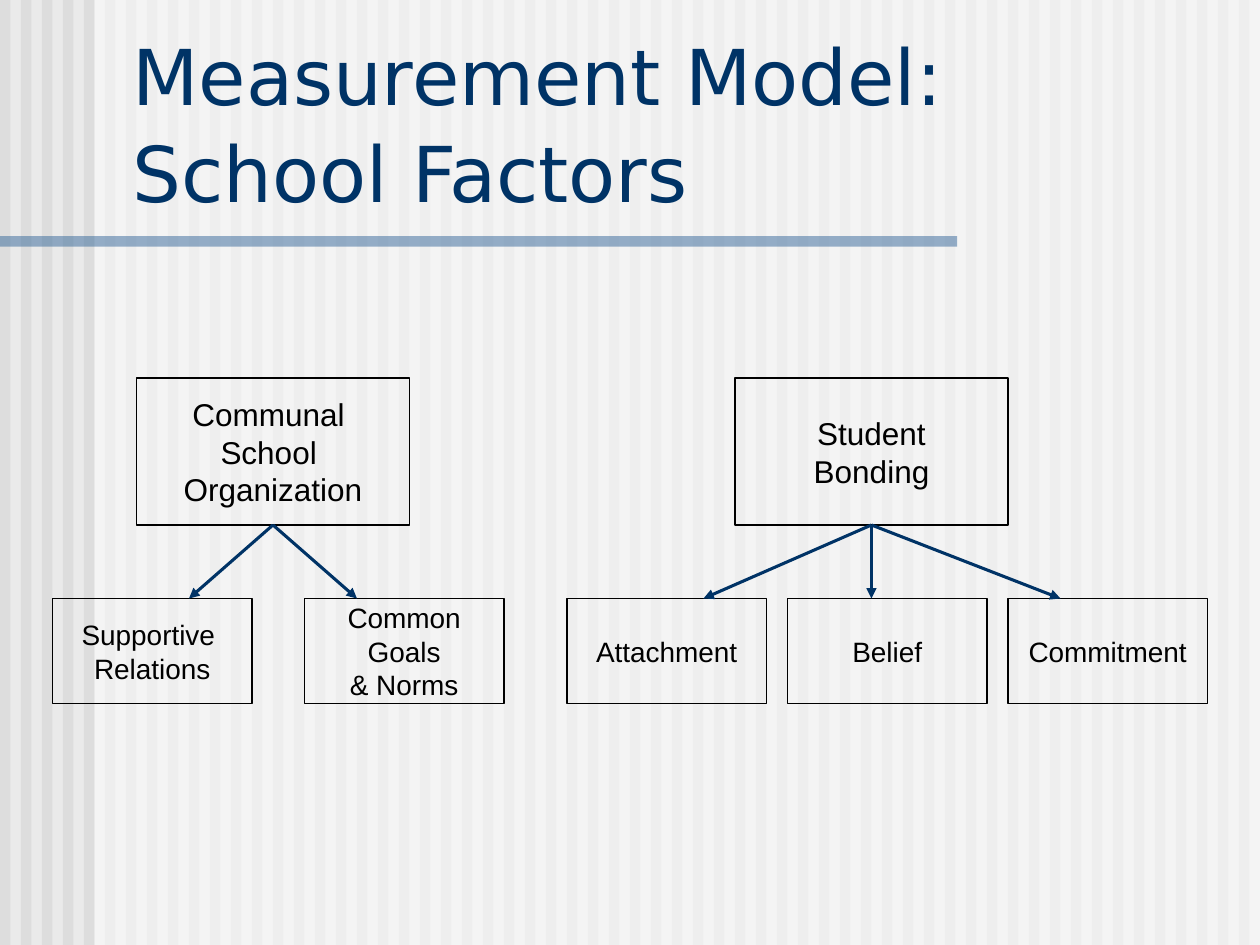
from pptx import Presentation
from pptx.dml.color import RGBColor
from pptx.enum.shapes import MSO_CONNECTOR as CONN, MSO_SHAPE as SHAPE
from pptx.enum.text import MSO_ANCHOR as ANCHOR, MSO_AUTO_SIZE as AUTO, PP_ALIGN as ALIGN
from pptx.oxml.ns import qn
from pptx.util import Pt
from lxml.etree import SubElement

WIDTH, HEIGHT = 720, 540
NAVY, BLACK = "003366", "000000"


def rgb(value):
    return RGBColor.from_string(value)


def add_text(p, text, size, font, color):
    r = p.add_run()
    r.text = text
    r.font.size = Pt(size)
    r.font.name = font
    r.font.color.rgb = rgb(color)


def add_bar(shapes, x, y, w, h, color, alpha=None):
    sp = shapes.add_shape(SHAPE.RECTANGLE, Pt(x), Pt(y), Pt(w), Pt(h))
    sp.shadow.inherit = False
    sp.fill.solid()
    sp.fill.fore_color.rgb = rgb(color)
    sp.line.fill.background()
    if alpha is not None:
        clr = sp.element.spPr.find(f"{qn('a:solidFill')}/{qn('a:srgbClr')}")
        SubElement(clr, qn("a:alpha")).set("val", str(alpha * 1000))


def add_backdrop(s, x, y, w, h):
    s.background.fill.solid()
    s.background.fill.fore_color.rgb = rgb("EAEAEA")
    shapes = s.shapes.add_group_shape().shapes
    pitch = 12
    for i in range(w // pitch):
        add_bar(shapes, x + i * pitch, y, pitch / 2, h, "DDDDDD")
    add_bar(shapes, x + 54, y, w - 54, h, "FFFFFF", 50)
    add_bar(shapes, x, y + 135, 547, 6, "336699", 50)


def add_title(s, x, y, w, h, lines):
    title = s.shapes.title
    title.element.getparent().append(title.element)
    title.left, title.top, title.width, title.height = Pt(x), Pt(y), Pt(w), Pt(h)
    tf = title.text_frame
    tf.word_wrap = True
    tf.auto_size = AUTO.NONE
    tf.vertical_anchor = ANCHOR.BOTTOM
    p = tf.paragraphs[0]
    p.alignment = ALIGN.LEFT
    p.line_spacing = 1.05
    for i, line in enumerate(lines):
        if i:
            p.add_line_break()
        add_text(p, line, 44, "DejaVu Sans", NAVY)


def add_box(s, x, y, w, h, lines, size):
    sp = s.shapes.add_shape(SHAPE.RECTANGLE, Pt(x), Pt(y), Pt(w), Pt(h))
    sp.shadow.inherit = False
    sp.fill.background()
    sp.line.color.rgb = rgb(BLACK)
    sp.line.width = Pt(0.75)
    tf = sp.text_frame
    tf.word_wrap = True
    tf.vertical_anchor = ANCHOR.MIDDLE
    for i, line in enumerate(lines):
        p = tf.add_paragraph() if i else tf.paragraphs[0]
        p.alignment = ALIGN.CENTER
        add_text(p, line, size, "Arial", BLACK)
    return sp


def add_arrow(s, source, x, y):
    cxn = s.shapes.add_connector(CONN.STRAIGHT, 0, 0, Pt(x), Pt(y))
    cxn.begin_connect(source, 2)
    cxn.line.color.rgb = rgb(NAVY)
    cxn.line.width = Pt(1.75)
    SubElement(cxn.line._get_or_add_ln(), qn("a:tailEnd")).set("type", "triangle")
    SubElement(cxn.element.spPr, qn("a:effectLst"))


def add_factor(s, x, y, offset, lines, step, indicators):
    factor = add_box(s, x + offset, y, 156, 84, lines, 18)
    row = y + 126
    for i, (label, tip) in enumerate(indicators):
        add_box(s, x + i * step, row, 114, 60, label, 16)
        add_arrow(s, factor, x + tip, row)


def main():
    prs = Presentation()
    prs.slide_width, prs.slide_height = Pt(WIDTH), Pt(HEIGHT)
    s = prs.slides.add_slide(prs.slide_layouts[5])
    add_backdrop(s, 0, 0, WIDTH, HEIGHT)
    add_title(s, 68.4, 15, 643, 113, ["Measurement Model: ", "School Factors"])
    add_factor(s, 30, 216, 48, ["Communal ", "School ", "Organization"], 144, [
        (["Supportive ", "Relations"], 78),
        (["Common Goals", "& Norms"], 174),
    ])
    add_factor(s, 324, 216, 96, ["Student", "Bonding"], 126, [
        (["Attachment"], 78),
        (["Belief"], 174),
        (["Commitment"], 282),
    ])
    prs.save("out.pptx")


if __name__ == "__main__":
    main()
